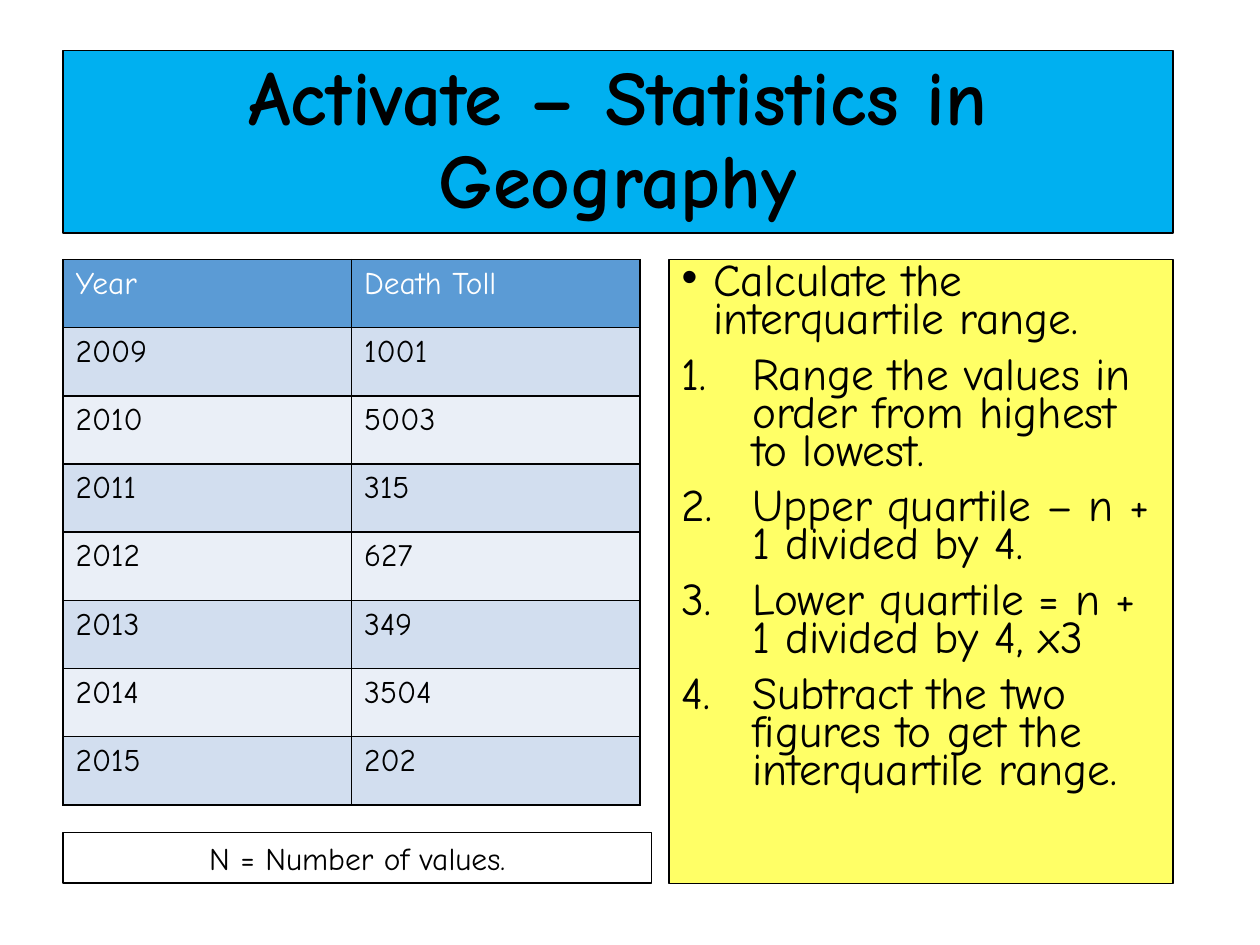
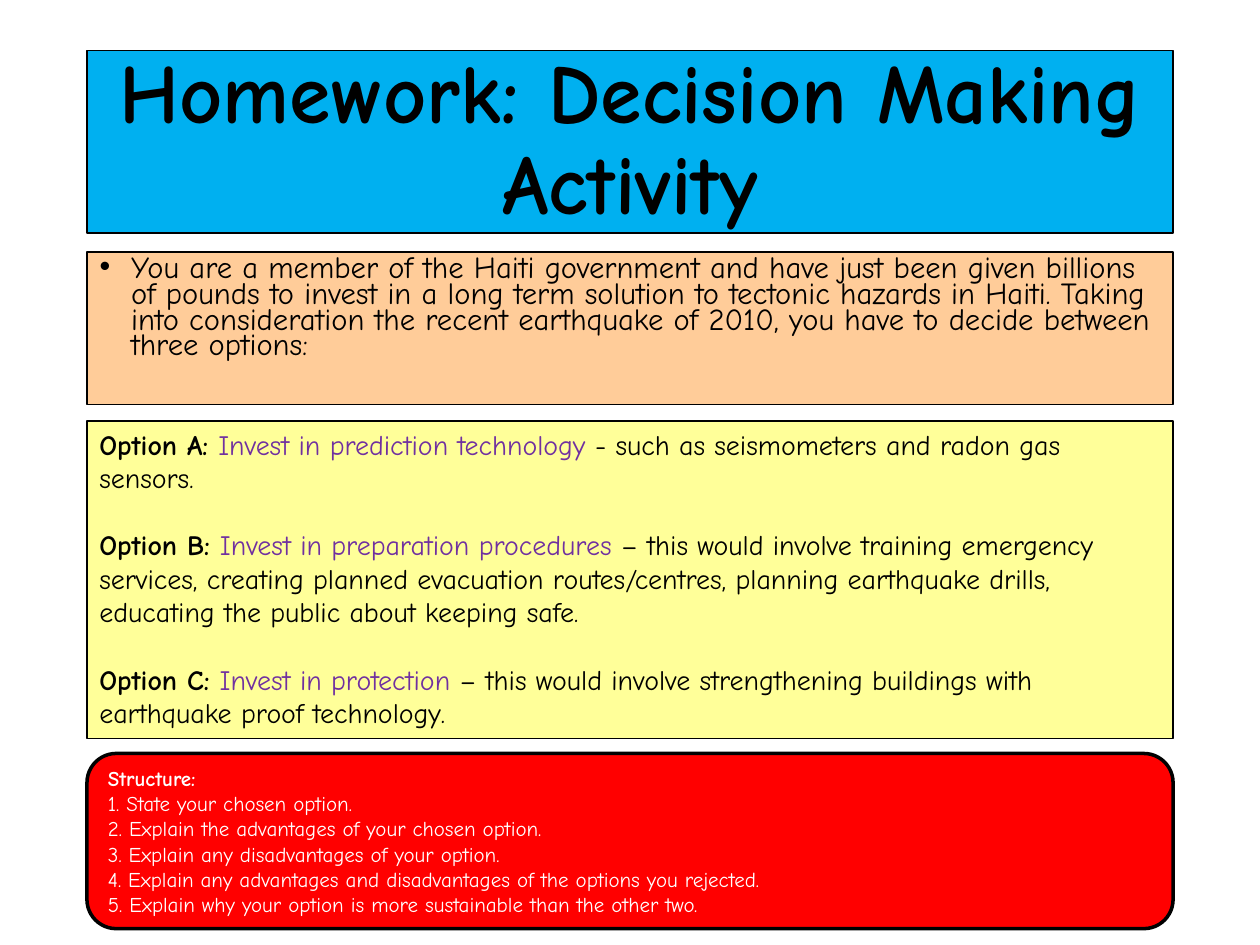
from dataclasses import dataclass
from typing import Optional

from lxml.etree import SubElement
from pptx import Presentation
from pptx.dml.color import RGBColor
from pptx.enum.shapes import MSO_SHAPE
from pptx.enum.text import MSO_ANCHOR, MSO_AUTO_SIZE, PP_ALIGN
from pptx.oxml.ns import qn
from pptx.util import Inches, Pt

FONT = "Comic Neue"
COLOURS = {
    "ink": "000000",
    "paper": "FFFFFF",
    "banner": "00B0F0",
    "method": "FFFF66",
    "scenario": "FFCC99",
    "options": "FFFF99",
    "structure": "FF0000",
    "choice": "7030A0",
    "table_head": "5B9BD5",
    "band_odd": "D2DEEF",
    "band_even": "EAEFF7",
}
SLIDE_WIDTH, SLIDE_HEIGHT = Inches(10), Inches(7.5)
COLUMNS, ROWS = 100, 75
BULLET, NUMBER = "bullet", "number"
INDENTS = {BULLET: 0.25, NUMBER: 0.56}


@dataclass(frozen=True)
class Area:
    column: float
    row: float
    columns: float
    rows: float

    def place(self) -> tuple[int, int, int, int]:
        return (
            int(SLIDE_WIDTH * self.column / COLUMNS),
            int(SLIDE_HEIGHT * self.row / ROWS),
            int(SLIDE_WIDTH * self.columns / COLUMNS),
            int(SLIDE_HEIGHT * self.rows / ROWS),
        )


@dataclass(frozen=True)
class Panel:
    area: Area
    size: float
    fill: Optional[str] = None
    line_width: float = 0.75


@dataclass(frozen=True)
class ListItem:
    text: str
    marker: str = BULLET


@dataclass(frozen=True)
class Option:
    label: str
    choice: str
    detail: str


DEATH_TOLLS = [
    ("Year", "Death Toll"),
    ("2009", "1001"),
    ("2010", "5003"),
    ("2011", "315"),
    ("2012", "627"),
    ("2013", "349"),
    ("2014", "3504"),
    ("2015", "202"),
]
METHOD = [
    ListItem("Calculate the interquartile range."),
    ListItem("Range the values in order from highest to lowest.", NUMBER),
    ListItem("Upper quartile – n + 1 divided by 4.", NUMBER),
    ListItem("Lower quartile = n + 1 divided by 4, x3", NUMBER),
    ListItem("Subtract the two figures to get the interquartile range.", NUMBER),
]
SCENARIO = [
    ListItem(
        "You are a member of the Haiti government and have just been given "
        "billions of pounds to invest in a long term solution to tectonic "
        "hazards in Haiti. Taking into consideration the recent earthquake of "
        "2010, you have to decide between three options:"
    )
]
OPTIONS = [
    Option(
        "Option A: ",
        "Invest in prediction technology ",
        "- such as seismometers and radon gas sensors.",
    ),
    Option(
        "Option B: ",
        "Invest in preparation procedures ",
        "– this would involve training emergency services, creating planned "
        "evacuation routes/centres, planning earthquake drills, educating the "
        "public about keeping safe.",
    ),
    Option(
        "Option C: ",
        "Invest in protection ",
        "– this would involve strengthening buildings with earthquake proof technology.",
    ),
]
STRUCTURE = [
    "Structure:",
    "1. State your chosen option.",
    "2. Explain the advantages of your chosen option.",
    "3. Explain any disadvantages of your option.",
    "4. Explain any advantages and disadvantages of the options you rejected.",
    "5. Explain why your option is more sustainable than the other two.",
]


def rgb(colour: str) -> RGBColor:
    return RGBColor.from_string(COLOURS[colour])


def style_run(run, size: float, colour: str = "ink", bold: bool = False) -> None:
    run.font.name = FONT
    run.font.size = Pt(size)
    run.font.bold = bold
    run.font.color.rgb = rgb(colour)


def style_paragraph(paragraph, size: float, colour: str = "ink", bold: bool = False) -> None:
    for run in paragraph.runs:
        style_run(run, size, colour, bold)


def style_panel(shape, panel: Panel) -> None:
    shape.left, shape.top, shape.width, shape.height = panel.area.place()
    if panel.fill:
        shape.fill.solid()
        shape.fill.fore_color.rgb = rgb(panel.fill)
    shape.line.color.rgb = rgb("ink")
    shape.line.width = Pt(panel.line_width)
    shape.text_frame.word_wrap = True
    shape.text_frame.auto_size = MSO_AUTO_SIZE.NONE


def set_marker(paragraph, marker: str) -> None:
    properties = paragraph._p.get_or_add_pPr()
    indent = Inches(INDENTS[marker])
    properties.set("marL", str(indent))
    properties.set("indent", str(-indent))
    SubElement(properties, qn("a:buFont")).set(
        "typeface", "Arial" if marker == BULLET else FONT
    )
    if marker == BULLET:
        SubElement(properties, qn("a:buChar")).set("char", "•")
    else:
        SubElement(properties, qn("a:buAutoNum")).set("type", "arabicPeriod")


def fill_title(slide, heading: str, panel: Panel) -> None:
    title = slide.shapes.title
    style_panel(title, panel)
    title.text_frame.text = heading
    title.text_frame.vertical_anchor = MSO_ANCHOR.MIDDLE
    paragraph = title.text_frame.paragraphs[0]
    paragraph.alignment = PP_ALIGN.CENTER
    paragraph.line_spacing = 0.9
    style_paragraph(paragraph, panel.size, bold=True)


def fill_body(slide, items: list[ListItem], panel: Panel) -> None:
    body = slide.placeholders[1]
    style_panel(body, panel)
    body.text_frame.text = "\n".join(item.text for item in items)
    for paragraph, item in zip(body.text_frame.paragraphs, items):
        paragraph.line_spacing = 0.7
        paragraph.space_before = Pt(10)
        set_marker(paragraph, item.marker)
        style_paragraph(paragraph, panel.size)


def border_cell(cell) -> None:
    properties = cell._tc.get_or_add_tcPr()
    for position, side in enumerate(("lnL", "lnR", "lnT", "lnB")):
        border = properties.makeelement(qn(f"a:{side}"), {"w": str(Pt(1))})
        fill = SubElement(border, qn("a:solidFill"))
        SubElement(fill, qn("a:srgbClr")).set("val", COLOURS["ink"])
        properties.insert(position, border)


def add_death_tolls(slide, area: Area) -> None:
    table = slide.shapes.add_table(
        len(DEATH_TOLLS), len(DEATH_TOLLS[0]), *area.place()
    ).table
    for row, values in enumerate(DEATH_TOLLS):
        band = "band_odd" if row % 2 else "band_even"
        for column, value in enumerate(values):
            cell = table.cell(row, column)
            cell.text_frame.text = value
            cell.fill.solid()
            cell.fill.fore_color.rgb = rgb(band if row else "table_head")
            border_cell(cell)
            style_paragraph(
                cell.text_frame.paragraphs[0], 18, "ink" if row else "paper"
            )


def add_key(slide, panel: Panel) -> None:
    key = slide.shapes.add_textbox(*panel.area.place())
    style_panel(key, panel)
    key.text_frame.text = "N = Number of values."
    paragraph = key.text_frame.paragraphs[0]
    paragraph.alignment = PP_ALIGN.CENTER
    style_paragraph(paragraph, panel.size)


def add_options(slide, panel: Panel) -> None:
    choices = slide.shapes.add_textbox(*panel.area.place())
    style_panel(choices, panel)
    frame = choices.text_frame
    for index, option in enumerate(OPTIONS):
        paragraph = frame.add_paragraph() if index else frame.paragraphs[0]
        if index:
            paragraph.space_before = Pt(19.2)
        for text, colour, bold in (
            (option.label, "ink", True),
            (option.choice, "choice", False),
            (option.detail, "ink", False),
        ):
            run = paragraph.add_run()
            run.text = text
            style_run(run, panel.size, colour, bold)


def add_structure(slide, panel: Panel) -> None:
    structure = slide.shapes.add_shape(MSO_SHAPE.ROUNDED_RECTANGLE, *panel.area.place())
    structure.shadow.inherit = False
    style_panel(structure, panel)
    structure.text_frame.text = "\n".join(STRUCTURE)
    structure.text_frame.vertical_anchor = MSO_ANCHOR.MIDDLE
    for index, paragraph in enumerate(structure.text_frame.paragraphs):
        paragraph.alignment = PP_ALIGN.JUSTIFY
        style_paragraph(paragraph, panel.size, "paper", bold=index == 0)


def build_statistics(slide) -> None:
    fill_title(
        slide,
        "Activate – Statistics in Geography",
        Panel(Area(5, 4, 88.1, 14.5), 44, "banner"),
    )
    fill_body(slide, METHOD, Panel(Area(53.1, 20.6, 40, 49.5), 25.9, "method"))
    add_death_tolls(slide, Area(5, 20.6, 45.8, 43.3))
    add_key(slide, Panel(Area(5, 66.1, 46.7, 4), 18))


def build_homework(slide) -> None:
    left, width = 6.9, 86.2
    fill_title(
        slide,
        "Homework: Decision Making Activity",
        Panel(Area(left, 4, width, 14.5), 48, "banner"),
    )
    fill_body(slide, SCENARIO, Panel(Area(left, 20, width, 12.1), 17.5, "scenario"))
    add_options(slide, Panel(Area(left, 33.4, width, 25.2), 16, "options"))
    add_structure(slide, Panel(Area(left, 59.8, width, 13.9), 12, "structure", 2))


def main() -> None:
    presentation = Presentation()
    presentation.slide_width, presentation.slide_height = SLIDE_WIDTH, SLIDE_HEIGHT
    for build in (build_statistics, build_homework):
        build(presentation.slides.add_slide(presentation.slide_layouts[1]))
    presentation.save("out.pptx")


if __name__ == "__main__":
    main()
